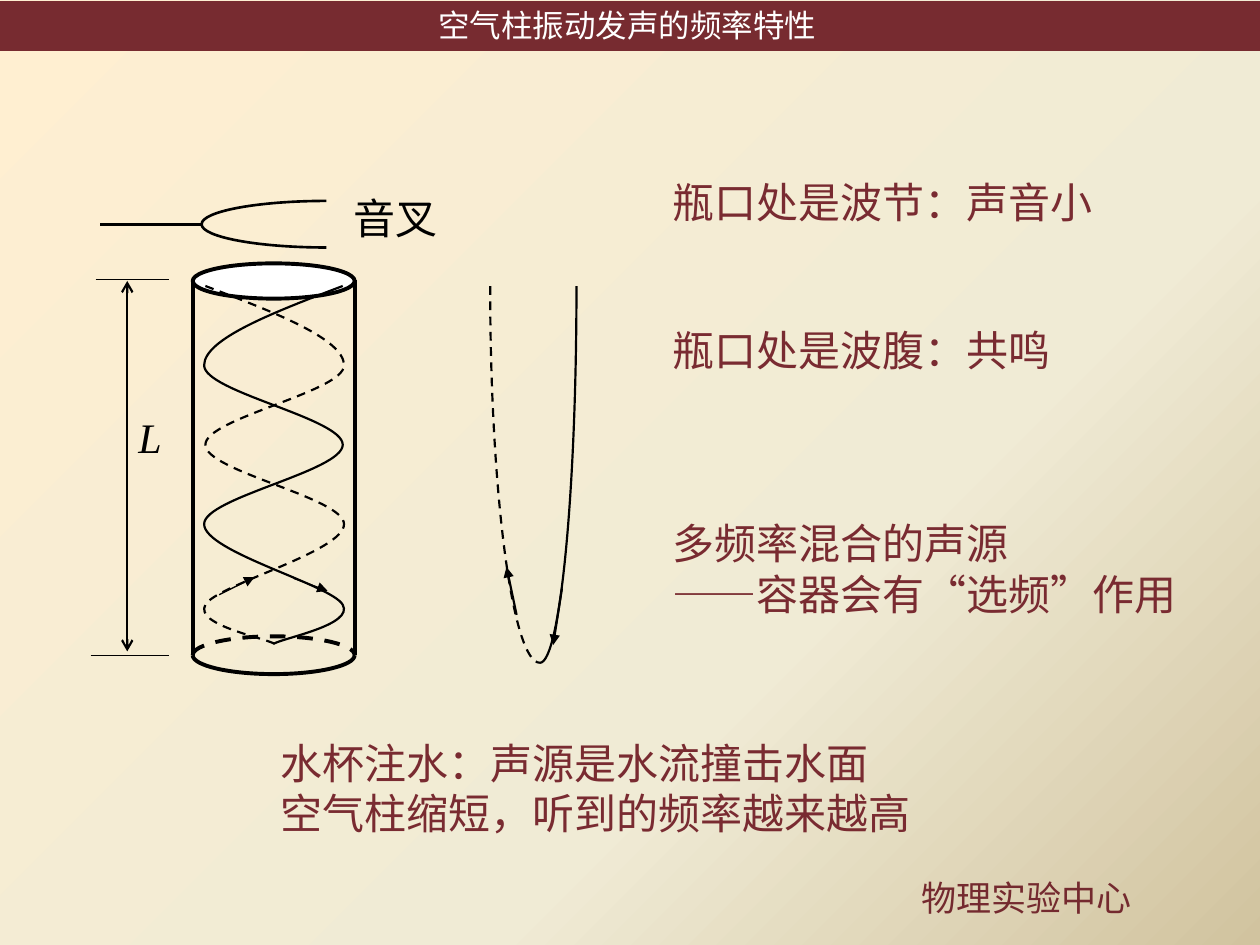
from copy import deepcopy
from dataclasses import dataclass

from pptx import Presentation
from pptx.dml.color import RGBColor
from pptx.enum.dml import MSO_LINE
from pptx.enum.shapes import MSO_CONNECTOR, MSO_SHAPE
from pptx.enum.text import PP_ALIGN
from pptx.oxml.ns import qn
from pptx.oxml.xmlchemy import OxmlElement
from pptx.util import Inches, Pt

COLUMNS, ROWS = 100, 75
CELL = Inches(0.1)
ROUNDNESS = 0.55


@dataclass(frozen=True)
class Theme:
    banner: str = "772B30"
    body: str = "792B31"
    footer: str = "742A2F"
    ink: str = "000000"
    paper: str = "FFFFFF"
    background: tuple = ((0, "FFEFD1"), (0.65, "F0EBD5"), (1, "D1C39F"))
    title_size: int = 18
    footer_size: int = 20
    body_size: int = 24
    thin: float = 0.75
    wave: float = 1.25
    fork: float = 1.5
    wall: float = 2.25
    east_asian: str = "Noto Sans CJK SC"


THEME = Theme()


def grid(*cells):
    return [round(cell * CELL) for cell in cells]


def rgb(code):
    return RGBColor.from_string(code)


def paint_background(page):
    fill = page.background.fill
    fill.gradient()
    fill.gradient_angle = 315
    first = next(page._element.iter(qn("a:gs")))
    first.addnext(deepcopy(first))
    for stop, (position, code) in zip(fill.gradient_stops, THEME.background):
        stop.position = position
        stop.color.rgb = rgb(code)


def set_line(shape, width, code=THEME.ink, dashed=False):
    shape.line.color.rgb = rgb(code)
    shape.line.width = Pt(width)
    if dashed:
        shape.line.dash_style = MSO_LINE.DASH


def add_solid(page, kind, place, fill, line, width):
    shape = page.shapes.add_shape(kind, *grid(*place))
    shape.shadow.inherit = False
    shape.fill.solid()
    shape.fill.fore_color.rgb = rgb(fill)
    set_line(shape, width, line)


def add_line(page, start, end, width, head=None, tail=None):
    line = page.shapes.add_connector(MSO_CONNECTOR.STRAIGHT, *grid(*start, *end))
    line._element.spPr.append(OxmlElement("a:effectLst"))
    set_line(line, width)
    for tag, kind in (("a:headEnd", head), ("a:tailEnd", tail)):
        if kind:
            arrow = OxmlElement(tag)
            arrow.set("type", kind)
            line.line._get_or_add_ln().append(arrow)


def add_curve(page, knots, width, dashed=False):
    """Draw joined cubic curves: one start knot, then three knots per curve."""
    places = [tuple(grid(*knot)) for knot in knots]
    builder = page.shapes.build_freeform(*places[0])
    builder.add_line_segments(places[1:], close=False)
    shape = builder.convert_to_shape()
    segments = list(shape._element.iter(qn("a:lnTo")))
    for first in range(0, len(segments), 3):
        cubic = OxmlElement("a:cubicBezTo")
        segments[first].addprevious(cubic)
        for segment in segments[first:first + 3]:
            cubic.append(segment[0])
            segment.getparent().remove(segment)
    shape.shadow.inherit = False
    shape.fill.background()
    set_line(shape, width, dashed=dashed)


def quarter(center, across, down):
    """Knots of a quarter ellipse from its side to its top or bottom."""
    column, row = center
    return [(column + across, row), (column + across, row + ROUNDNESS * down),
            (column + ROUNDNESS * across, row + down), (column, row + down)]


def half(center, across, down):
    return quarter(center, across, down) + quarter(center, -across, down)[-2::-1]


def add_text(page, place, lines, font="Times New Roman", size=THEME.body_size,
             color=THEME.body, italic=None, align=None, wrap=True):
    box = page.shapes.add_textbox(*grid(*place))
    frame = box.text_frame
    frame.word_wrap = wrap
    for index, line in enumerate(lines):
        para = frame.paragraphs[0] if index == 0 else frame.add_paragraph()
        para.alignment = align
        span = para.add_run()
        span.text = line
        span.font.color.rgb = rgb(color)
        for name, value in {"name": font, "size": Pt(size), "italic": italic}.items():
            setattr(span.font, name, value)
        east_asian = OxmlElement("a:ea")
        east_asian.set("typeface", THEME.east_asian)
        span.font._element.find(qn("a:latin")).addnext(east_asian)


def draw_cylinder(page):
    left, right, top, bottom = 15.3, 28.15, 22.2, 52
    center, across, down = ((left + right) / 2, bottom), (right - left) / 2, 1.5
    add_solid(page, MSO_SHAPE.OVAL, (left, 20.9, right - left, 2.8),
              THEME.paper, THEME.ink, THEME.wall)
    for side in (left, right):
        add_line(page, (side, top), (side, bottom), THEME.wall)
    add_curve(page, half(center, across, down), THEME.wall)
    add_curve(page, half(center, -across, -down), THEME.wall, dashed=True)


def draw_length_mark(page):
    add_line(page, (10.1, 22.3), (10.1, 51.7), THEME.wave, "arrow", "arrow")
    for start, row in ((7.6, 22.2), (7.2, 52)):
        add_line(page, (start, row), (13.4, row), THEME.thin)
    add_text(page, (10, 32.2, 6.5, 7.8), ["L"], color=THEME.ink, italic=True,
             align=PP_ALIGN.JUSTIFY)


def draw_waves(page):
    axis, left, right = 21.75, 16.2, 27.2
    knots = [(right, 22.7), (21.7, 24.8), (left, 26.9), (left, 29),
             (left, 31.1), (right, 33.2), (right, 35.3),
             (right, 37.4), (left, 39.5), (left, 41.6),
             (left, 43.8), (26.3, 46.4), (right, 48),
             (28.1, 49.6), (22.6, 50.6), (21.7, 51.1)]
    mirrored = [(2 * axis - column, row) for column, row in knots]
    add_curve(page, knots, THEME.wave)
    add_curve(page, mirrored, THEME.wave, dashed=True)
    add_line(page, (17.4, 47.2), (20.2, 45.8), THEME.thin, tail="triangle")
    add_line(page, (23.3, 45.9), (26, 46.9), THEME.thin, tail="triangle")


def draw_tuning_fork(page):
    joint, tip, row = 16, 25.9, 17.8
    for prong in (1.85, -1.85):
        add_curve(page, quarter((tip, row), joint - tip, prong), THEME.fork)
    add_line(page, (joint, row), (7.9, row), THEME.fork)
    add_text(page, (27.1, 14.8, 12.6, 5.4), ["音叉"], "Calibri", color=THEME.ink,
             align=PP_ALIGN.JUSTIFY)


def draw_single_loop(page):
    center, depth = (42.85, 22.7), 29.9
    add_curve(page, quarter(center, 2.9, depth), THEME.wave)
    add_curve(page, quarter(center, -3.95, depth), THEME.wave, dashed=True)
    add_line(page, (44.6, 46.7), (43.9, 51.2), THEME.wave, tail="triangle")
    add_line(page, (41, 48.8), (40.2, 45), THEME.wave, tail="triangle")


def main():
    deck = Presentation()
    deck.slide_width, deck.slide_height = grid(COLUMNS, ROWS)
    page = deck.slides.add_slide(deck.slide_layouts[6])
    paint_background(page)
    add_solid(page, MSO_SHAPE.RECTANGLE, (0, 0.1, COLUMNS, 3.9),
              THEME.banner, THEME.banner, THEME.thin)
    add_text(page, (71.9, 69.1, 19.2, 4.4), ["物理实验中心"], THEME.east_asian,
             THEME.footer_size, THEME.footer, align=PP_ALIGN.CENTER)
    add_text(page, (33.8, 0, 32.5, 4), ["空气柱振动发声的频率特性"], THEME.east_asian,
             THEME.title_size, THEME.paper)
    for draw in (draw_cylinder, draw_length_mark, draw_waves, draw_tuning_fork,
                 draw_single_loop):
        draw(page)
    notes = 52.4
    add_text(page, (notes, 13.5, 35.7, 5), ["瓶口处是波节：声音小"], "Arial", wrap=False)
    add_text(page, (notes, 25.3, 37.4, 5), ["瓶口处是波腹：共鸣"], "Arial")
    add_text(page, (notes, 40.6, 42.4, 9.1),
             ["多频率混合的声源", "——容器会有“选频”作用"], wrap=False)
    add_text(page, (21.3, 58, 52.5, 9.1),
             ["水杯注水：声源是水流撞击水面", "空气柱缩短，听到的频率越来越高"], wrap=False)
    deck.save("out.pptx")


if __name__ == "__main__":
    main()
